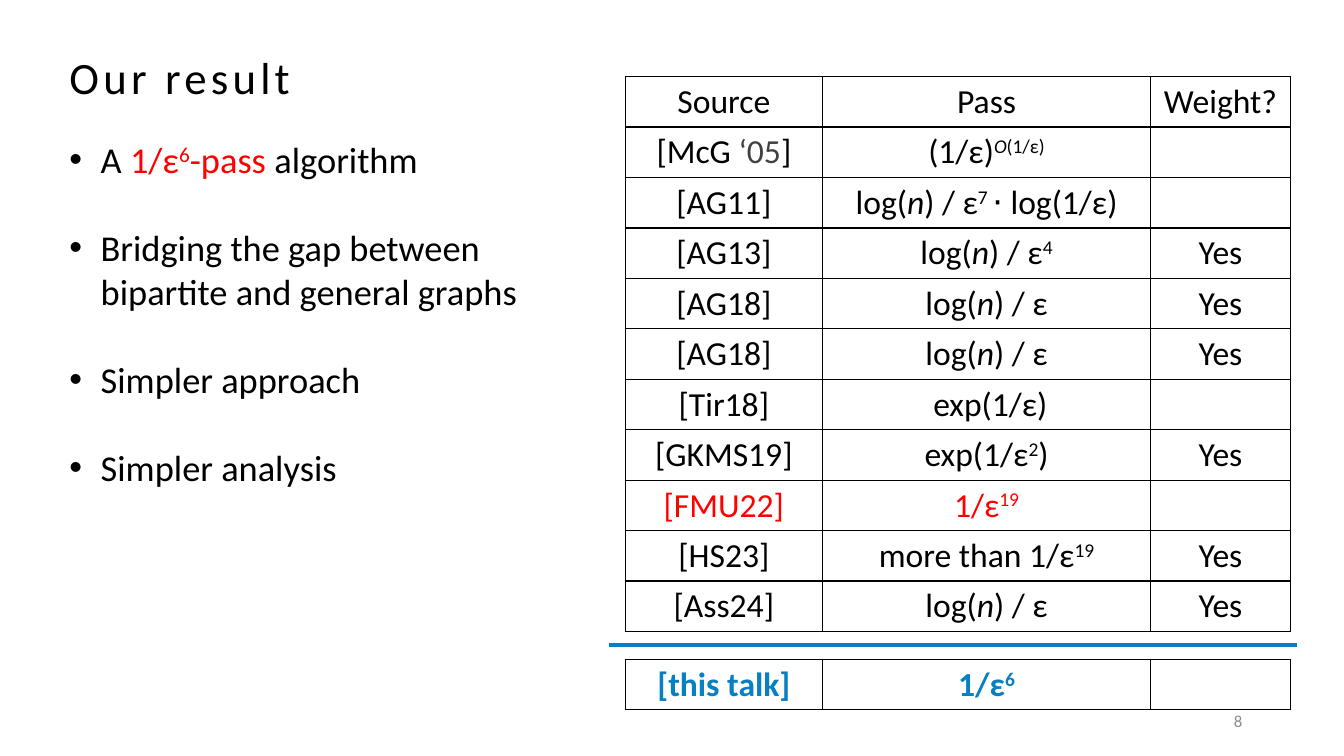
from lxml.etree import SubElement
from pptx import Presentation
from pptx.dml.color import RGBColor
from pptx.enum.shapes import MSO_CONNECTOR
from pptx.enum.text import MSO_ANCHOR, PP_ALIGN
from pptx.oxml.ns import qn
from pptx.util import Inches, Pt

COLORS = {
    "black": "000000",
    "white": "FFFFFF",
    "red": "FF0000",
    "blue": "0680C3",
    "quote": "404040",
    "number": "8C8C8C",
}
COLUMNS, ROWS = 133.3, 75


class Deck:
    font = "Calibri"

    def __init__(self):
        self.presentation = Presentation()
        self.presentation.slide_width = Inches(13.33)
        self.presentation.slide_height = Inches(7.5)
        self.slide = self.presentation.slides.add_slide(self.presentation.slide_layouts[6])

    def x(self, columns):
        return round(self.presentation.slide_width * columns / COLUMNS)

    def y(self, rows):
        return round(self.presentation.slide_height * rows / ROWS)

    def box(self, left, top, width, height):
        return self.x(left), self.y(top), self.x(width), self.y(height)

    def color(self, name):
        return RGBColor.from_string(COLORS[name])

    def fill_paragraph(self, paragraph, parts, size, color="black", bold=False):
        for part in [parts] if isinstance(parts, str) else parts:
            text, style = (part, "") if isinstance(part, str) else part
            run = paragraph.add_run()
            run.text = text
            run.font.name = self.font
            run.font.size = Pt(size)
            run.font.bold = bold
            run.font.italic = "italic" in style
            run.font.color.rgb = self.color(next((c for c in COLORS if c in style), color))
            if "super" in style:
                run.font._element.set("baseline", "30000")

    def text(self, at, parts, size, color="black", wrap=True, spacing=0,
             align=PP_ALIGN.LEFT, anchor=MSO_ANCHOR.TOP):
        frame = self.slide.shapes.add_textbox(*self.box(*at)).text_frame
        frame.word_wrap = wrap
        frame.vertical_anchor = anchor
        paragraph = frame.paragraphs[0]
        paragraph.alignment = align
        self.fill_paragraph(paragraph, parts, size, color)
        for run in paragraph.runs:
            run.font._element.set("spc", str(spacing * 100))

    def bullets(self, at, points, size, gap):
        frame = self.slide.shapes.add_textbox(*self.box(*at)).text_frame
        frame.word_wrap = True
        for index, point in enumerate(points):
            paragraph = frame.add_paragraph() if index else frame.paragraphs[0]
            paragraph.space_before = Pt(gap if index else 0)
            properties = paragraph._p.get_or_add_pPr()
            properties.set("marL", str(self.x(3.1)))
            properties.set("indent", str(-self.x(3.1)))
            SubElement(properties, qn("a:buFont"), typeface="Arial")
            SubElement(properties, qn("a:buChar"), char="•")
            self.fill_paragraph(paragraph, point, size)

    def border(self, cell):
        properties = cell._tc.get_or_add_tcPr()
        for side in ("lnL", "lnR", "lnT", "lnB"):
            line = SubElement(properties, qn(f"a:{side}"), w=str(Pt(1)))
            fill = SubElement(line, qn("a:solidFill"))
            SubElement(fill, qn("a:srgbClr"), val=COLORS["black"])

    def table(self, left, top, widths, row_height, entries, size, bold=False):
        at = self.box(left, top, sum(widths), row_height * len(entries))
        table = self.slide.shapes.add_table(len(entries), len(widths), *at).table
        table.first_row = table.horz_banding = False
        for column, width in zip(table.columns, widths):
            column.width = self.x(width)
        for row, (color, *contents) in zip(table.rows, entries):
            row.height = self.y(row_height)
            for cell, parts in zip(row.cells, contents):
                self.border(cell)
                cell.fill.solid()
                cell.fill.fore_color.rgb = self.color("white")
                paragraph = cell.text_frame.paragraphs[0]
                paragraph.alignment = PP_ALIGN.CENTER
                if parts:
                    self.fill_paragraph(paragraph, parts, size, color, bold)

    def rule(self, start, end, row, color, width):
        line = self.slide.shapes.add_connector(
            MSO_CONNECTOR.STRAIGHT, self.x(start), self.y(row), self.x(end), self.y(row))
        line.line.color.rgb = self.color(color)
        line.line.width = Pt(width)
        SubElement(line._element.spPr, qn("a:effectLst"))


def main():
    deck = Deck()
    deck.text((5.9, 4.4, 24.5, 6.4), "Our result", 32, wrap=False, spacing=3)

    log_n = ["log(", ("n", "italic"), ") / ε"]
    prior_work = [
        ("black", "Source", "Pass", "Weight?"),
        ("black", ["[McG ", ("‘05", "quote"), "]"],
         ["(1/ε)", ("O", "italic super"), ("(1/ε)", "super")], ""),
        ("black", "[AG11]", log_n + [("7 ", "super"), "⋅ log(1/ε)"], ""),
        ("black", "[AG13]", log_n + [("4", "super")], "Yes"),
        ("black", "[AG18]", log_n, "Yes"),
        ("black", "[AG18]", log_n, "Yes"),
        ("black", "[Tir18]", " exp(1/ε)", ""),
        ("black", "[GKMS19]", ["exp(1/ε", ("2", "super"), ")"], "Yes"),
        ("red", "[FMU22]", ["1/ε", ("19", "super")], ""),
        ("black", "[HS23]", ["more than 1/ε", ("19", "super")], "Yes"),
        ("black", "[Ass24]", log_n, "Yes"),
    ]
    this_talk = [("blue", "[this talk]", ["1/ε", ("6", "super")], "")]
    widths = (19.6, 32.5, 13.9)
    deck.table(62, 7.6, widths, 5, prior_work, 24)

    contributions = [
        ["A ", ("1/ε", "red"), ("6", "red super"), ("-pass ", "red"), "algorithm"],
        "Bridging the gap between bipartite and general graphs",
        "Simpler approach",
        "Simpler analysis",
    ]
    deck.bullets((5.9, 13.1, 55.8, 36), contributions, 26, gap=31.7)

    deck.rule(60.4, 128.6, 64, "blue", 3)
    deck.table(62, 65.4, widths, 5, this_talk, 24, bold=True)
    deck.text((94.2, 69.5, 30, 4), "8", 12, "number",
              align=PP_ALIGN.RIGHT, anchor=MSO_ANCHOR.MIDDLE)
    deck.presentation.save("out.pptx")


if __name__ == "__main__":
    main()
